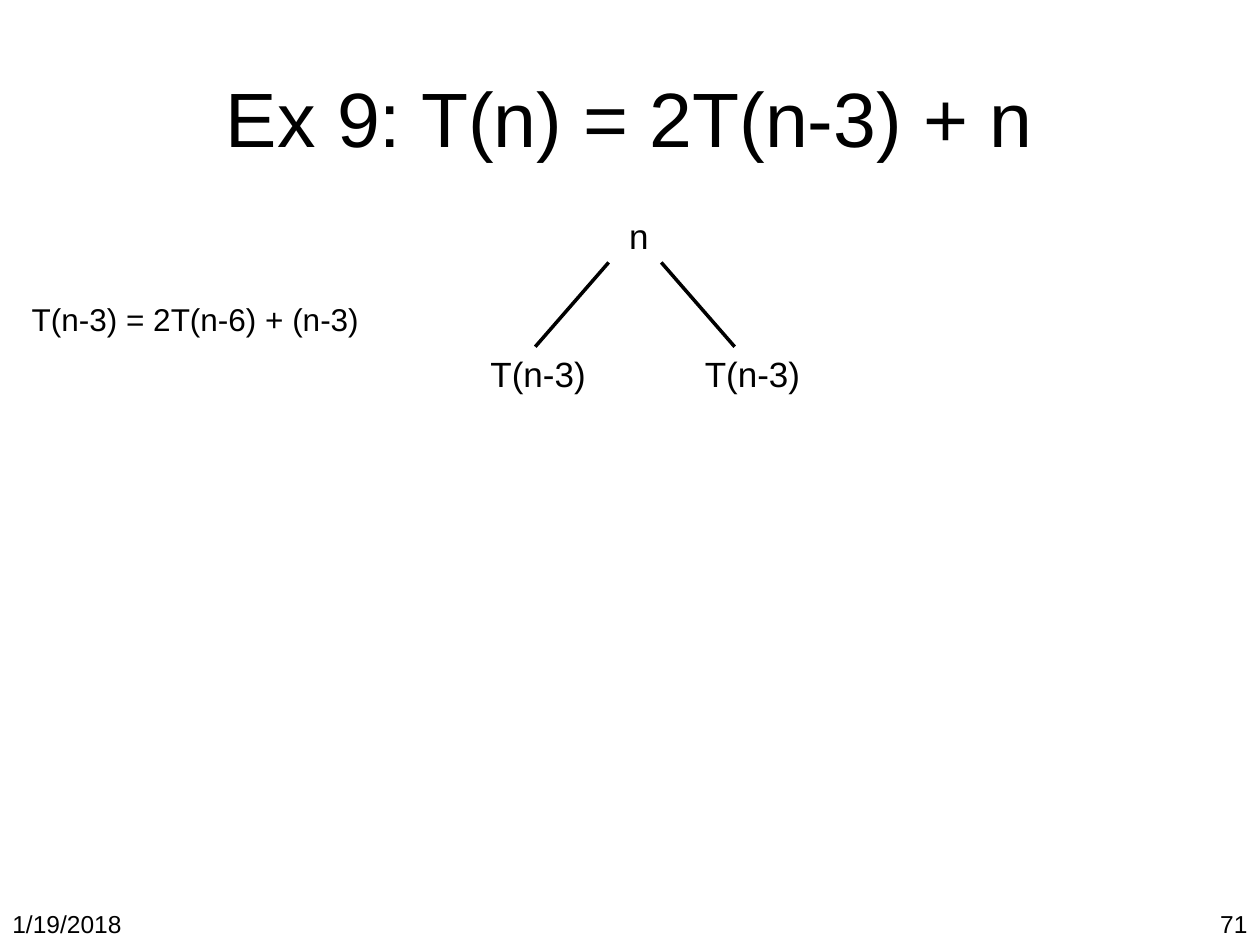
from lxml import etree
from pptx import Presentation
from pptx.dml.color import RGBColor
from pptx.enum import shapes, text
from pptx.oxml import ns
from pptx.util import Cm, Pt

BLACK = RGBColor(0, 0, 0)
WHITE = RGBColor(255, 255, 255)
FONT = "Arial"
PAGE_WIDTH, PAGE_HEIGHT = 25.4, 19.05
LEFT, CENTER, RIGHT = text.PP_ALIGN.LEFT, text.PP_ALIGN.CENTER, text.PP_ALIGN.RIGHT


def write(box, wording, size=20, align=CENTER, anchor=text.MSO_ANCHOR.TOP, wrap=True):
    frame = box.text_frame
    frame.word_wrap = wrap
    frame.auto_size = text.MSO_AUTO_SIZE.NONE if wrap else text.MSO_AUTO_SIZE.SHAPE_TO_FIT_TEXT
    frame.vertical_anchor = anchor
    para = frame.paragraphs[0]
    para.alignment = align
    span = para.add_run()
    span.text = wording
    span.font.name = FONT
    span.font.size = Pt(size)
    span.font.color.rgb = BLACK


def add_label(page, wording, left, top, width, height, **style):
    box = page.shapes.add_textbox(Cm(left), Cm(top), Cm(width), Cm(height))
    write(box, wording, **style)


def add_branch(page, start_x, start_y, end_x, end_y):
    line = page.shapes.add_connector(
        shapes.MSO_CONNECTOR.STRAIGHT, Cm(start_x), Cm(start_y), Cm(end_x), Cm(end_y))
    line.line.color.rgb = BLACK
    line.line.width = Pt(2)
    etree.SubElement(line._element.spPr, ns.qn("a:effectLst"))


def add_title(page, wording, left, top, width, height):
    title = page.shapes.title
    title.left, title.top, title.width, title.height = map(Cm, (left, top, width, height))
    write(title, wording, size=44, anchor=text.MSO_ANCHOR.MIDDLE)


def add_recursion_tree(page, root, child, left, top, width):
    """Draw a root with two equal children at the sides of the given box."""
    middle = left + width / 2
    root_width, child_width, label_height = 0.91, 2.44, 1.11
    add_label(page, root, middle - 0.13 - root_width / 2, top,
              root_width, label_height, wrap=False)
    fork = middle - 0.21
    for side in (-1, 1):
        add_branch(page, fork + side * 0.53, top + 1.1, fork + side * 2.01, top + 2.8)
        child_middle = middle + side * (width - child_width) / 2
        add_label(page, child, child_middle - child_width / 2, top + 2.8,
                  child_width, label_height, wrap=False)


def add_footer(page, date, number, top, height):
    width = 5.92
    add_label(page, date, 0, top, width, height, size=14, align=LEFT)
    add_label(page, number, PAGE_WIDTH - width, top, width, height, size=14, align=RIGHT)


def main():
    deck = Presentation()
    deck.slide_width, deck.slide_height = Cm(PAGE_WIDTH), Cm(PAGE_HEIGHT)
    page = deck.slides.add_slide(deck.slide_layouts[5])
    page.background.fill.solid()
    page.background.fill.fore_color.rgb = WHITE
    add_title(page, "Ex 9: T(n) = 2T(n-3) + n", 1.27, 0.76, 22.86, 3.18)
    add_footer(page, "1/19/2018", "71", top=18.21, height=0.84)
    add_recursion_tree(page, "n", "T(n-3)", left=9.63, top=4.19, width=6.76)
    add_label(page, "T(n-3) = 2T(n-6) + (n-3)", 0.36, 5.92, 7.16, 1.02, size=18, wrap=False)
    deck.save("out.pptx")


if __name__ == "__main__":
    main()
